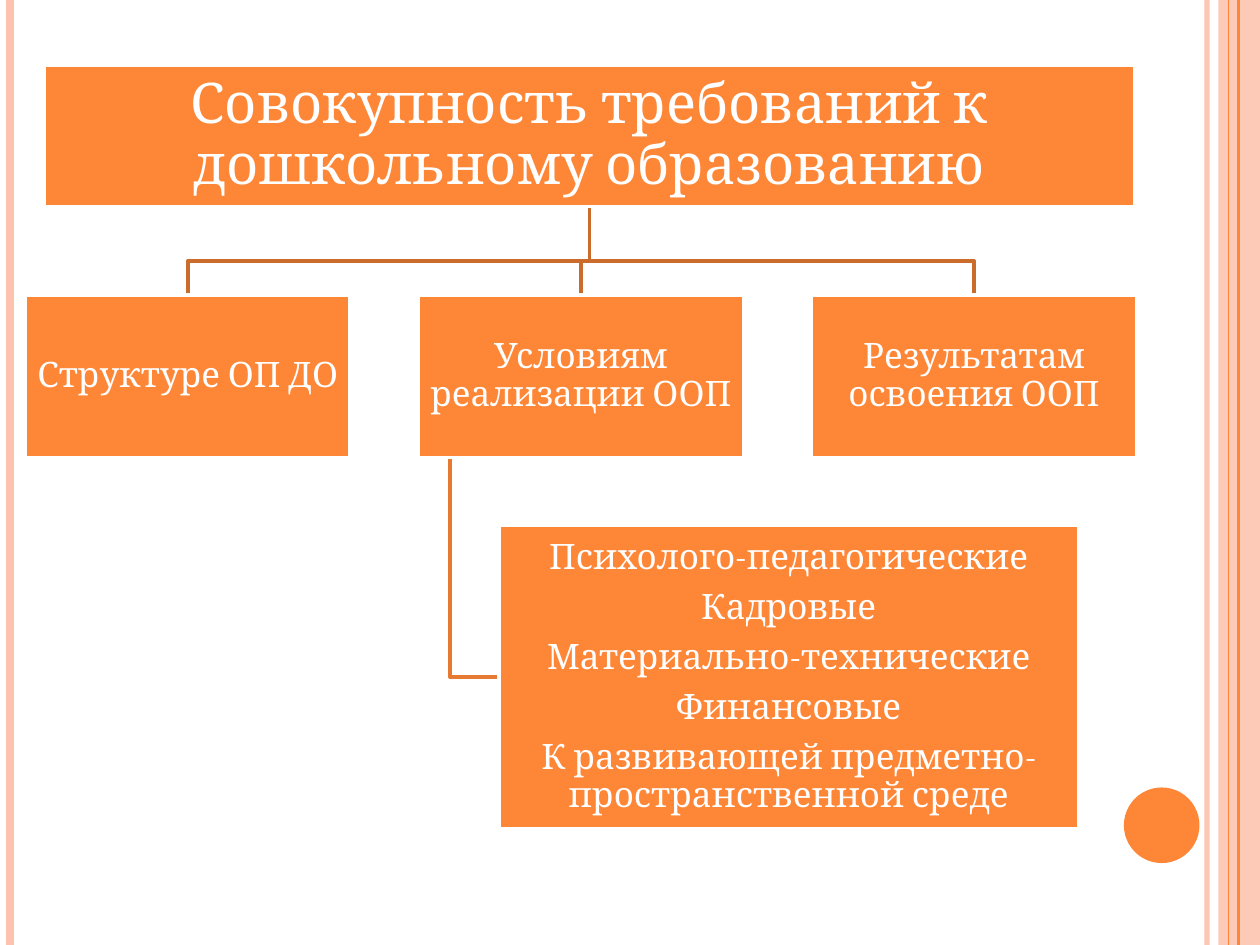
from lxml import etree
from pptx import Presentation, util as u
from pptx.dml.color import RGBColor
from pptx.enum import shapes, text
from pptx.oxml.ns import qn

FONT, ORANGE, PEACH, WHITE = "Cambria", "FE8637", "FEC3AE", "FFFFFF"
BRANCH, SUBBRANCH = "CB6B2C", "E77A32"


def paint(part, color, alpha=100):
    """Colour a fill or a line's fill, with opacity in percent."""
    part.solid()
    part.fore_color.rgb = RGBColor.from_string(color)
    if alpha < 100:
        srgb = next(part._xPr.iter(qn("a:srgbClr")))
        etree.SubElement(srgb, qn("a:alpha")).set("val", str(alpha * 1000))


def fill_box(box, place, lines, size, inset):
    """Place and format one orange box with centred white lines."""
    box.left, box.top, box.width, box.height = map(u.Inches, place)
    paint(box.fill, ORANGE)
    paint(box.line.fill, WHITE)
    box.line.width = u.Pt(2)
    frame = box.text_frame
    frame.text = "\n".join(lines)
    frame.word_wrap = True
    frame.auto_size = text.MSO_AUTO_SIZE.NONE
    frame.vertical_anchor = text.MSO_ANCHOR.MIDDLE
    frame.margin_left = frame.margin_right = u.Inches(inset)
    frame.margin_top = frame.margin_bottom = u.Inches(inset)
    for line in frame.paragraphs:
        line.alignment = text.PP_ALIGN.CENTER
        line.line_spacing = 0.9
        line.space_before = u.Pt(0)
        line.space_after = u.Pt(round(size * 0.35))
        for run in line.runs:
            run.font.size, run.font.name = u.Pt(size), FONT
            run.font.color.rgb = RGBColor.from_string(WHITE)


prs = Presentation()
prs.slide_width, prs.slide_height = u.Inches(10), u.Inches(7.5)
slide = prs.slides.add_slide(prs.slide_layouts[5])
items = slide.shapes

# Side stripes, band and circle
band = items.add_shape(shapes.MSO_SHAPE.RECTANGLE, u.Inches(9.67), 0,
                       u.Inches(0.33), prs.slide_height)
circle = items.add_shape(shapes.MSO_SHAPE.OVAL, u.Inches(8.92), u.Inches(6.25),
                         u.Inches(0.6), u.Inches(0.6))
for ornament, color, alpha in [(band, PEACH, 87), (circle, ORANGE, 100)]:
    ornament.shadow.inherit = False
    paint(ornament.fill, color, alpha)
    ornament.line.fill.background()

for x, color, width, alpha in [(9.58, PEACH, 3, 93), (0.08, PEACH, 4.5, 100),
                               (9.83, ORANGE, 1.5, 100), (9.75, ORANGE, 0.75, 100)]:
    stripe = items.add_connector(shapes.MSO_CONNECTOR.STRAIGHT, u.Inches(x), 0,
                                 u.Inches(x), prs.slide_height)
    paint(stripe.line.fill, color, alpha)
    stripe.line.width = u.Pt(width)
    etree.SubElement(stripe._element.spPr, qn("a:effectLst"))

# Rows and columns of the chart
head_left, head_top, head_width, head_height = 0.35, 0.52, 8.66, 1.12
head_bottom = head_top + head_height
head_center = head_left + head_width / 2
row_top, row_height, box_width = 2.34, 1.29, 2.58
columns = [0.2 + 3.12 * i for i in range(3)]
detail_left, detail_top, detail_width, detail_height = 3.96, 4.17, 4.6, 2.41
fork, stem = 2.07, 3.57

# Branches, drawn behind the boxes
branches = [([(head_center, head_bottom), (head_center, fork),
              (left + box_width / 2, fork), (left + box_width / 2, row_top)], BRANCH)
            for left in columns]
detail_middle = detail_top + detail_height / 2
branches.append(([(stem, row_top + row_height), (stem, detail_middle),
                  (detail_left, detail_middle)], SUBBRANCH))
for points, color in branches:
    start, *bends = [(u.Inches(x), u.Inches(y)) for x, y in points]
    outline = items.build_freeform(*start)
    outline.add_line_segments(bends, close=False)
    branch = outline.convert_to_shape()
    branch.shadow.inherit = False
    branch.fill.background()
    paint(branch.line.fill, color)
    branch.line.width = u.Pt(2)

# Boxes
title = items.title
title.element.getparent().append(title.element)  # in front of the branches
fill_box(title, (head_left, head_top, head_width, head_height),
         ["Совокупность требований к дошкольному образованию"], 32, 0.02)

requirements = ["Структуре ОП ДО", "Условиям реализации ООП", "Результатам освоения ООП"]
boxes = [((left, row_top, box_width, row_height), [label])
         for left, label in zip(columns, requirements)]
boxes.append(((detail_left, detail_top, detail_width, detail_height),
              ["Психолого-педагогические", "Кадровые", "Материально-технические",
               "Финансовые", "К развивающей предметно-пространственной среде"]))
for place, lines in boxes:
    box = items.add_shape(shapes.MSO_SHAPE.RECTANGLE, 0, 0, 0, 0)
    box.shadow.inherit = False
    fill_box(box, place, lines, 20, 0.01)

prs.save("out.pptx")
